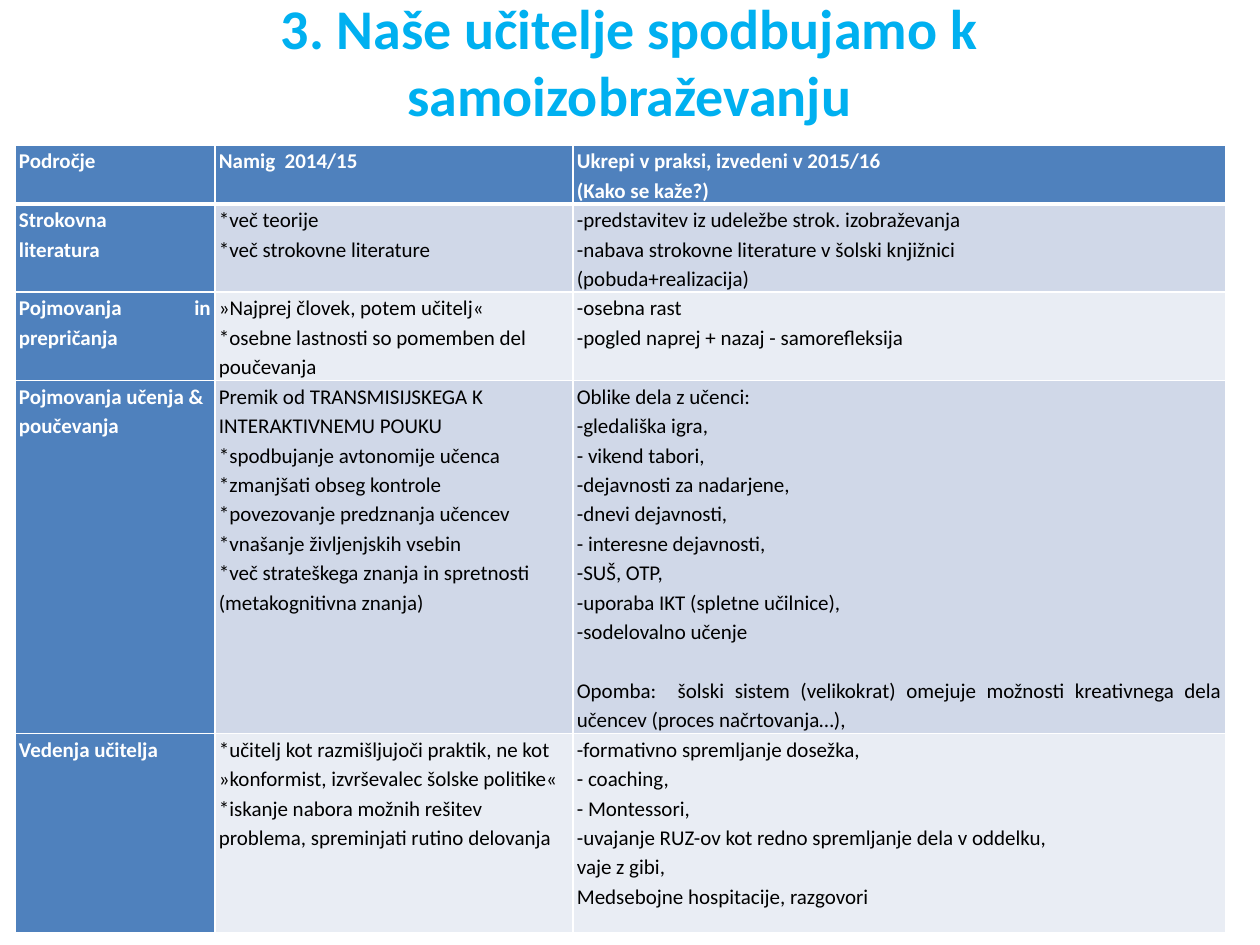
from dataclasses import dataclass

from lxml.etree import SubElement
from pptx import Presentation
from pptx.dml.color import RGBColor
from pptx.enum.text import MSO_ANCHOR, MSO_AUTO_SIZE, PP_ALIGN as Align
from pptx.oxml.ns import qn
from pptx.util import Emu, Pt

PX_PER_INCH = 126
FONT = "Calibri"
SKY = RGBColor(0x00, 0xB0, 0xF0)
BLUE = RGBColor(0x4F, 0x81, 0xBD)
BAND_DARK = RGBColor(0xD0, 0xD8, 0xE8)
BAND_LIGHT = RGBColor(0xE9, 0xED, 0xF4)
WHITE = RGBColor(0xFF, 0xFF, 0xFF)
BLACK = RGBColor(0x00, 0x00, 0x00)


@dataclass
class Entry:
    lines: list[str]
    align: Align = Align.JUSTIFY
    note: str = ""  # closing paragraph, set one line apart


@dataclass
class Row:
    height: int
    entries: list[Entry]


COLUMN_WIDTHS = [200, 358, 653]
ROWS = [
    Row(57, [
        Entry(["Področje"]),
        Entry(["Namig  2014/15"]),
        Entry(["Ukrepi v praksi, izvedeni v 2015/16", "(Kako se kaže?)"]),
    ]),
    Row(87, [
        Entry(["Strokovna", "literatura"]),
        Entry(["*več teorije", "*več strokovne literature"], Align.LEFT),
        Entry(["-predstavitev iz udeležbe strok. izobraževanja",
               "-nabava strokovne literature v šolski knjižnici",
               "(pobuda+realizacija)"], Align.LEFT),
    ]),
    Row(85, [
        Entry(["Pojmovanja in prepričanja"]),
        Entry(["»Najprej človek, potem učitelj«",
               "*osebne lastnosti so pomemben del poučevanja"], Align.LEFT),
        Entry(["-osebna rast", "-pogled naprej + nazaj - samorefleksija"]),
    ]),
    Row(350, [
        Entry(["Pojmovanja učenja & poučevanja"], Align.LEFT),
        Entry(["Premik od TRANSMISIJSKEGA K INTERAKTIVNEMU POUKU",
               "*spodbujanje avtonomije učenca",
               "*zmanjšati obseg kontrole",
               "*povezovanje predznanja učencev",
               "*vnašanje življenjskih vsebin",
               "*več strateškega znanja in spretnosti (metakognitivna znanja)"],
              Align.LEFT),
        Entry(["Oblike dela z učenci:",
               "-gledališka igra,",
               "- vikend tabori,",
               "-dejavnosti za nadarjene,",
               "-dnevi dejavnosti,",
               "- interesne dejavnosti,",
               "-SUŠ, OTP,",
               "-uporaba IKT (spletne učilnice),",
               "-sodelovalno učenje"],
              note="Opomba:  šolski sistem (velikokrat) omejuje možnosti "
                   "kreativnega dela učencev (proces načrtovanja…),"),
    ]),
    Row(199, [
        Entry(["Vedenja učitelja"]),
        Entry(["*učitelj kot razmišljujoči praktik, ne kot »konformist, "
               "izvrševalec šolske politike«",
               "*iskanje nabora možnih rešitev problema, spreminjati rutino "
               "delovanja"], Align.LEFT),
        Entry(["-formativno spremljanje dosežka,",
               "- coaching,",
               "- Montessori,",
               "-uvajanje RUZ-ov kot redno spremljanje dela v oddelku,",
               "vaje z gibi,",
               "Medsebojne hospitacije, razgovori"]),
    ]),
]


def px(length: int) -> Emu:
    return Emu(round(length * 914400 / PX_PER_INCH))


def set_font(font, size: int, color: RGBColor, bold: bool) -> None:
    font.name = FONT
    font.size = Pt(size)
    font.bold = bold
    font.color.rgb = color


def add_borders(cell, is_header: bool, below_header: bool) -> None:
    widths = {"lnL": 1, "lnR": 1, "lnT": 3 if below_header else 1,
              "lnB": 3 if is_header else 1}
    properties = cell._tc.get_or_add_tcPr()
    for side, width in widths.items():
        line = SubElement(properties, qn(f"a:{side}"), w=str(Pt(width)))
        fill = SubElement(line, qn("a:solidFill"))
        SubElement(fill, qn("a:srgbClr"), val=str(WHITE))


def fill_cell(cell, entry: Entry, row: int, column: int) -> None:
    is_heading = row == 0 or column == 0
    add_borders(cell, row == 0, row == 1)
    cell.fill.solid()
    band = BAND_DARK if row % 2 else BAND_LIGHT
    cell.fill.fore_color.rgb = BLUE if is_heading else band
    cell.margin_left = cell.margin_right = px(4)
    cell.margin_top = cell.margin_bottom = 0

    frame = cell.text_frame
    frame.text = "\n".join(entry.lines + ([entry.note] if entry.note else []))
    for para in frame.paragraphs:
        para.alignment = entry.align
        para.line_spacing = 1.15
        set_font(para.font, 12, WHITE if is_heading else BLACK, is_heading)
    if entry.note:
        frame.paragraphs[-1].space_before = Pt(16.8)


def add_title(page) -> None:
    title = page.shapes.title
    title.left, title.top, title.width, title.height = map(px, (94, 6, 1071, 110))
    frame = title.text_frame
    frame.text = "3. Naše učitelje spodbujamo k samoizobraževanju"
    frame.vertical_anchor = MSO_ANCHOR.MIDDLE
    frame.auto_size = MSO_AUTO_SIZE.NONE
    para = frame.paragraphs[0]
    para.alignment = Align.CENTER
    set_font(para.font, 32, SKY, True)


def add_measures_table(page) -> None:
    height = sum(row.height for row in ROWS)
    table = page.shapes.add_table(
        len(ROWS), len(COLUMN_WIDTHS),
        px(15), px(145), px(sum(COLUMN_WIDTHS)), px(height)).table
    for column, width in zip(table.columns, COLUMN_WIDTHS):
        column.width = px(width)
    for r, row in enumerate(ROWS):
        table.rows[r].height = px(row.height)
        for c, entry in enumerate(row.entries):
            fill_cell(table.cell(r, c), entry, r, c)


def main() -> None:
    deck = Presentation()
    deck.slide_width, deck.slide_height = px(1260), px(945)
    page = deck.slides.add_slide(deck.slide_layouts[0])

    # Title, without the unused subtitle
    subtitle = page.placeholders[1].element
    subtitle.getparent().remove(subtitle)
    add_title(page)

    # Table of hints and measures
    add_measures_table(page)
    deck.save("out.pptx")


if __name__ == "__main__":
    main()
